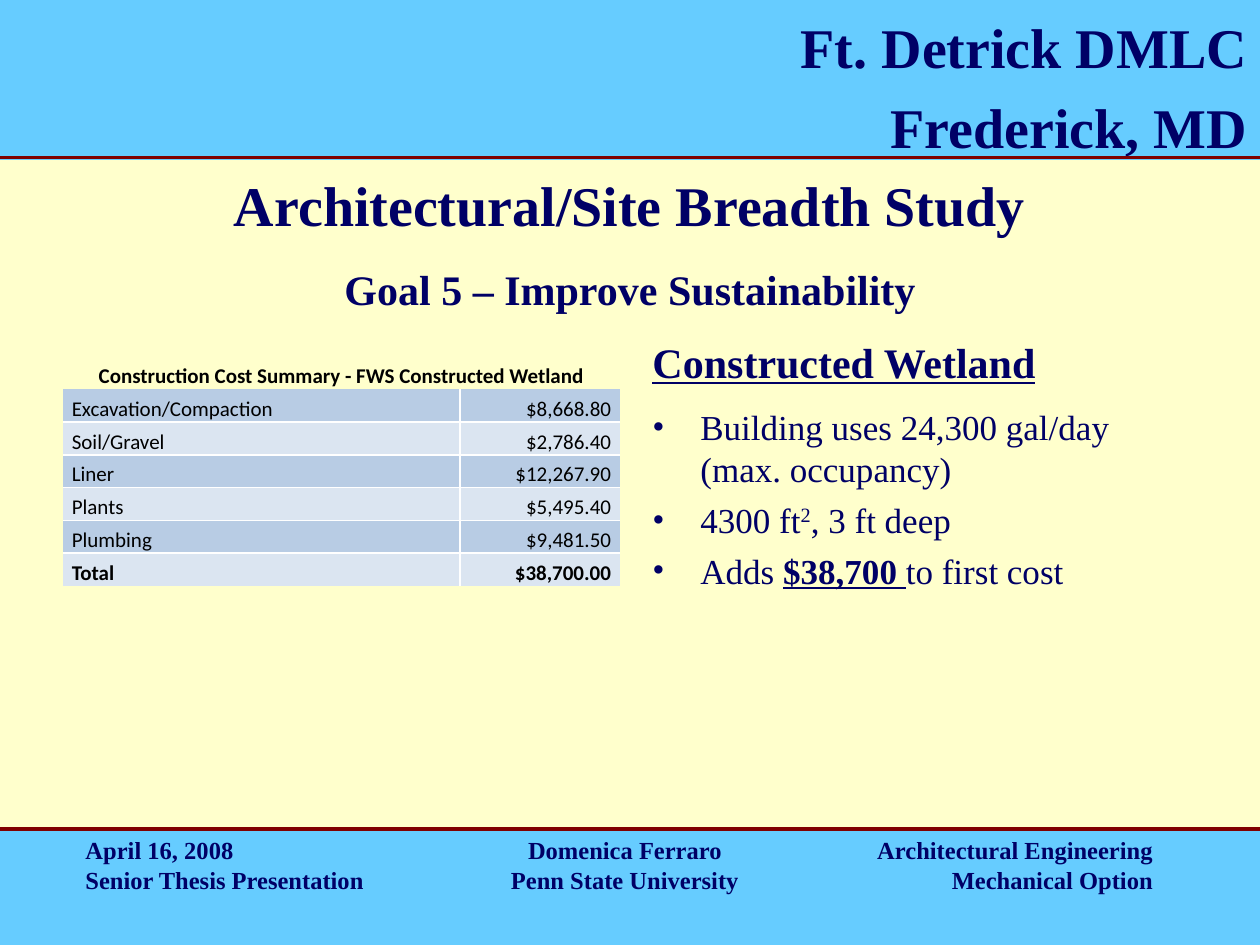
"""Build the constructed wetland slide of the site breadth study."""
from lxml.etree import SubElement
from pptx import Presentation
from pptx.dml.color import RGBColor
from pptx.enum.shapes import MSO_CONNECTOR as CONN, MSO_SHAPE as SHAPE
from pptx.enum.text import MSO_ANCHOR as ANCHOR, PP_ALIGN as ALIGN
from pptx.oxml.ns import qn
from pptx.util import Inches, Pt

COLORS = {"navy": "000066", "sky": "66CCFF", "cream": "FFFFCC", "maroon": "800000",
          "black": "000000", "white": "FFFFFF", "dark": "B8CCE4", "light": "DBE5F1"}
SERIF, SANS = "Times New Roman", "Calibri"

HEADER = ["Ft. Detrick DMLC", "Frederick, MD"]
FOOTERS = [
    (0.58, ALIGN.LEFT, ["April 16, 2008", "Senior Thesis Presentation"]),
    (3.67, ALIGN.CENTER, ["Domenica Ferraro", "Penn State University"]),
    (6.67, ALIGN.RIGHT, ["Architectural Engineering", "Mechanical Option"]),
]
TITLES = [(1.33, 32, "Architectural/Site Breadth Study"),
          (2, 24, "Goal 5 – Improve Sustainability")]
HEADING = "Constructed Wetland"
BULLETS = [
    [("Building uses 24,300 gal/day (max. occupancy)", "")],
    [("4300 ft", ""), ("2", "super"), (", 3 ft deep", "")],
    [("Adds ", ""), ("$38,700 ", "strong"), ("to first cost", "")],
]
TABLE_TITLE = "Construction Cost Summary - FWS Constructed Wetland"
COSTS = [("Excavation/Compaction", "$8,668.80"), ("Soil/Gravel", "$2,786.40"),
         ("Liner", "$12,267.90"), ("Plants", "$5,495.40"),
         ("Plumbing", "$9,481.50"), ("Total", "$38,700.00")]
COL_WIDTHS, ROW_HEIGHT = (3.15, 1.27), 0.26
NO_STYLE = "{2D5ABB26-0587-4C30-8999-92F81FD0307C}"


def rgb(name):
    return RGBColor.from_string(COLORS[name])


def add_run(p, text, size, bold=False, underline=False, font=SERIF, color="navy"):
    r = p.add_run()
    r.text = text
    f = r.font
    f.name, f.size, f.bold, f.underline = font, Pt(size), bold, underline
    f.color.rgb = rgb(color)
    return r


def add_lines(tf, lines, size, align, gap=0, **style):
    for i, line in enumerate(lines):
        p = tf.add_paragraph() if i else tf.paragraphs[0]
        p.alignment = align
        if i and gap:
            p.space_before = Pt(gap)
        add_run(p, line, size, bold=True, **style)


def add_box(slide, x, y, w, h, anchor=ANCHOR.TOP):
    tf = slide.shapes.add_textbox(Inches(x), Inches(y), Inches(w), Inches(h)).text_frame
    tf.word_wrap = True
    tf.vertical_anchor = anchor
    return tf


def add_band(slide, y, h):
    sp = slide.shapes.add_shape(SHAPE.RECTANGLE, 0, Inches(y), Inches(10), Inches(h))
    sp.shadow.inherit = False
    sp.fill.solid()
    sp.fill.fore_color.rgb = rgb("sky")
    sp.line.fill.background()
    return sp


def add_rule(slide, y):
    line = slide.shapes.add_connector(CONN.STRAIGHT, Inches(10), Inches(y), 0, Inches(y))
    line.line.color.rgb = rgb("maroon")
    line.line.width = Pt(2)
    SubElement(line._element.spPr, qn("a:effectLst"))


def add_bullets(tf):
    for i, runs in enumerate(BULLETS):
        p = tf.add_paragraph() if i else tf.paragraphs[0]
        if i:
            p.space_before = Pt(5)
        pPr = p._p.get_or_add_pPr()
        pPr.set("marL", str(Inches(0.38)))
        pPr.set("indent", str(-Inches(0.38)))
        SubElement(pPr, qn("a:buFont"), typeface=SERIF)
        SubElement(pPr, qn("a:buChar"), char="•")
        for text, kind in runs:
            strong = kind == "strong"
            r = add_run(p, text, 20, strong, strong)
            if kind == "super":
                r._r.get_or_add_rPr().set("baseline", "30000")


def add_border(cell, side):
    ln = SubElement(cell._tc.get_or_add_tcPr(), qn(f"a:{side}"), w=str(Pt(1)))
    fill = SubElement(ln, qn("a:solidFill"))
    SubElement(fill, qn("a:srgbClr"), val=COLORS["white"])


def fill_cell(cell, text, align, bold):
    cell.margin_left = cell.margin_right = Inches(0.07)
    cell.margin_top = cell.margin_bottom = 0
    cell.vertical_anchor = ANCHOR.BOTTOM
    p = cell.text_frame.paragraphs[0]
    p.alignment, p.line_spacing = align, 1.15
    add_run(p, text, 12, bold, font=SANS, color="black")


def add_cost_table(slide):
    n = len(COSTS) + 1
    frame = slide.shapes.add_table(n, 2, Inches(0.5), Inches(2.83),
                                   Inches(sum(COL_WIDTHS)), Inches(n * ROW_HEIGHT))
    table = frame.table
    table.first_row = table.horz_banding = False
    table._tbl.tblPr.find(qn("a:tableStyleId")).text = NO_STYLE
    for col, w in zip(table.columns, COL_WIDTHS):
        col.width = Inches(w)
    for row in table.rows:
        row.height = Inches(ROW_HEIGHT)
    table.cell(0, 0).merge(table.cell(0, 1))
    fill_cell(table.cell(0, 0), TABLE_TITLE, ALIGN.CENTER, True)
    for c in range(2):
        table.cell(0, c).fill.background()
    for r, values in enumerate(COSTS, 1):
        for c, text in enumerate(values):
            cell = table.cell(r, c)
            fill_cell(cell, text, (ALIGN.LEFT, ALIGN.RIGHT)[c], r == n - 1)
            add_border(cell, ("lnR", "lnL")[c])
            if r > 1:
                add_border(cell, "lnT")
            if r < n - 1:
                add_border(cell, "lnB")
            cell.fill.solid()
            cell.fill.fore_color.rgb = rgb("dark" if r % 2 else "light")


def main():
    prs = Presentation()
    prs.slide_width, prs.slide_height = Inches(10), Inches(7.5)
    s = prs.slides.add_slide(prs.slide_layouts[6])
    s.background.fill.solid()
    s.background.fill.fore_color.rgb = rgb("cream")

    add_band(s, 6.58, 0.92)
    tf = add_band(s, 0, 1.27).text_frame
    tf.vertical_anchor = ANCHOR.TOP
    tf.margin_top = Inches(0.1)
    add_lines(tf, HEADER, 32, ALIGN.RIGHT, gap=7.5)
    for y in (1.25, 6.58):
        add_rule(s, y)
    for x, align, lines in FOOTERS:
        add_lines(add_box(s, x, 6.58, 2.58, 0.5), lines, 14, align)

    add_lines(add_box(s, 5.08, 2.42, 4.42, 0.7, ANCHOR.BOTTOM), [HEADING], 24,
              ALIGN.LEFT, underline=True)
    add_bullets(add_box(s, 5.08, 3.17, 4.42, 3.42))
    for y, size, text in TITLES:
        add_lines(add_box(s, 0, y, 10, 0.58, ANCHOR.MIDDLE), [text], size, ALIGN.CENTER)
    add_cost_table(s)
    prs.save("out.pptx")


if __name__ == "__main__":
    main()
